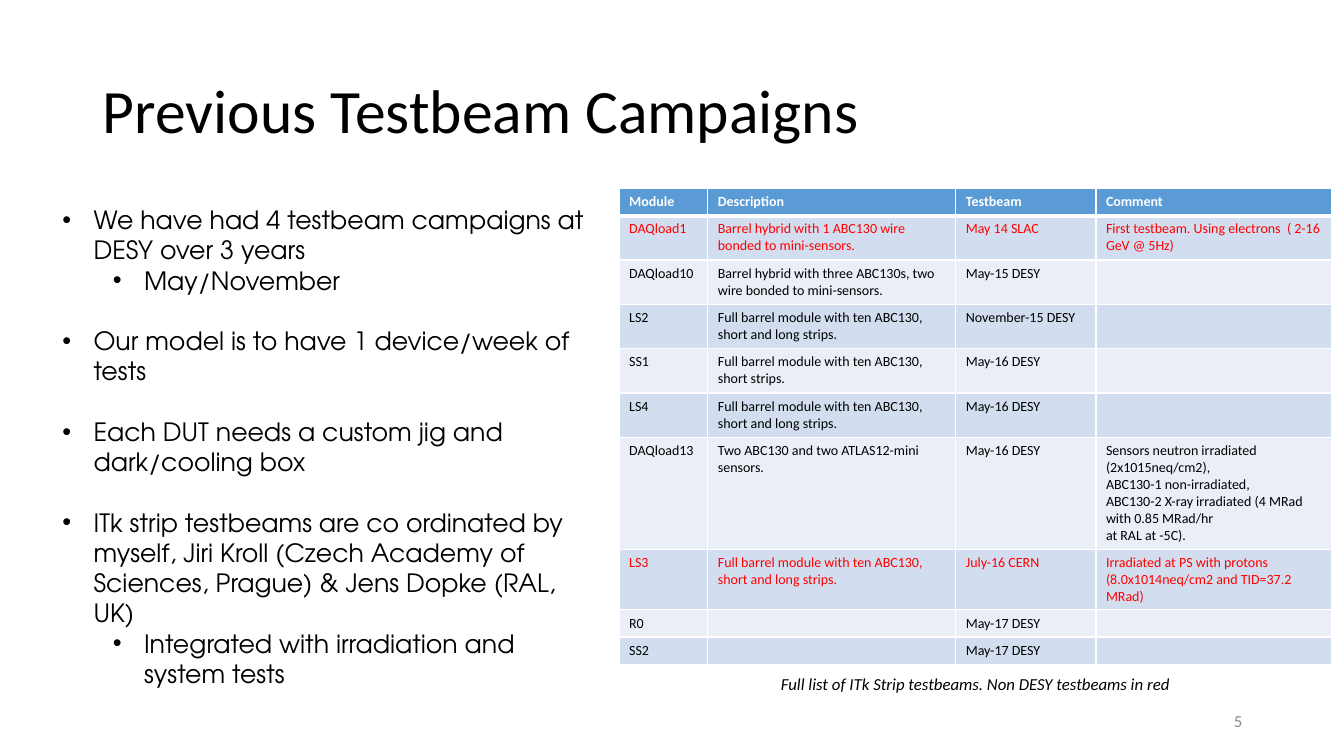
from collections import namedtuple
from dataclasses import dataclass

from lxml.etree import SubElement
from pptx import Presentation
from pptx.dml.color import RGBColor as Color
from pptx.enum.text import MSO_ANCHOR as Anchor, MSO_AUTO_SIZE as AutoSize, PP_ALIGN as Align
from pptx.oxml import parse_xml
from pptx.oxml.ns import nsdecls, qn
from pptx.util import Pt

Box = namedtuple("Box", "left top width height")


@dataclass(frozen=True)
class Theme:
    sans: str = "Calibri"
    geometric: str = "TeX Gyre Adventor"
    black: str = "000000"
    white: str = "FFFFFF"
    grey: str = "8C8C8C"
    red: str = "FF0000"
    header: str = "5B9BD5"
    bands: tuple = ("D2DEEF", "EAEFF7")
    title_size: int = 44
    body_size: int = 18
    small_size: int = 12
    table_size: int = 10
    group_gap: float = 21.6


THEME = Theme()

TITLE = "Previous Testbeam Campaigns"
BULLET_GROUPS = [
    ["We have had 4 testbeam campaigns at DESY over 3 years", "May/November"],
    ["Our model is to have 1 device/week of tests"],
    ["Each DUT needs a custom jig and dark/cooling box"],
    ["ITk strip testbeams are co ordinated by myself, Jiri Kroll "
     "(Czech Academy of Sciences, Prague) & Jens Dopke (RAL, UK)",
     "Integrated with irradiation and system tests"],
]
CAPTION = "Full list of ITk Strip testbeams. Non DESY testbeams in red"

COLUMN_WIDTHS = [88, 246, 139, 234]
HEADINGS = ["Module", "Description", "Testbeam", "Comment"]
FULL_MODULE = "Full barrel module with ten ABC130,\n"
LONG_STRIPS = FULL_MODULE + "short and long strips."
CAMPAIGNS = [
    (2, "DAQload1", "Barrel hybrid with 1 ABC130 wire bonded to mini-sensors.",
     "May 14 SLAC", "First testbeam. Using electrons  ( 2-16 GeV @ 5Hz)"),
    (2, "DAQload10", "Barrel hybrid with three ABC130s, two\nwire bonded to mini-sensors.",
     "May-15 DESY", ""),
    (2, "LS2", LONG_STRIPS, "November-15 DESY", ""),
    (2, "SS1", FULL_MODULE + "short strips.", "May-16 DESY", ""),
    (2, "LS4", LONG_STRIPS, "May-16 DESY", ""),
    (6, "DAQload13", "Two ABC130 and two ATLAS12-mini\nsensors.", "May-16 DESY",
     "Sensors neutron irradiated (2x1015neq/cm2),\nABC130-1 non-irradiated,\n"
     "ABC130-2 X-ray irradiated (4 MRad with 0.85 MRad/hr\nat RAL at -5C)."),
    (3, "LS3", LONG_STRIPS, "July-16 CERN",
     "Irradiated at PS with protons\n(8.0x1014neq/cm2 and TID=37.2 MRad)"),
    (1, "R0", "", "May-17 DESY", ""),
    (1, "SS2", "", "May-17 DESY", ""),
]


def px(length):
    return length * 9144


def place(box):
    return [px(length) for length in box]


def style(para, size, color, name=THEME.sans, bold=False, italic=False):
    for span in para.runs:
        font = span.font
        font.name, font.size = name, Pt(size)
        font.bold, font.italic = bold, italic
        font.color.rgb = Color.from_string(color)


def add_title(page, box):
    title = page.shapes.title
    title.left, title.top, title.width, title.height = place(box)
    frame = title.text_frame
    frame.text = TITLE
    frame.auto_size = AutoSize.NONE
    frame.vertical_anchor = Anchor.MIDDLE
    para = frame.paragraphs[0]
    para.alignment, para.line_spacing = Align.LEFT, 0.9
    style(para, THEME.title_size, THEME.black)


def add_text(page, box, text, align, color, anchor=Anchor.TOP, italic=False):
    frame = page.shapes.add_textbox(*place(box)).text_frame
    frame.word_wrap = True
    frame.vertical_anchor = anchor
    frame.text = text
    para = frame.paragraphs[0]
    para.alignment = align
    style(para, THEME.small_size, color, italic=italic)


def set_bullet(para, level):
    properties = para._p.get_or_add_pPr()
    properties.set("marL", str(px(31 + 50 * level)))
    properties.set("indent", str(px(-31)))
    SubElement(properties, qn("a:buFont")).set("typeface", "Arial")
    SubElement(properties, qn("a:buChar")).set("char", "•")
    para.level = level


def add_bullets(page, box):
    frame = page.shapes.add_textbox(*place(box)).text_frame
    frame.word_wrap = True
    frame.auto_size = AutoSize.SHAPE_TO_FIT_TEXT
    para = frame.paragraphs[0]
    for group_index, group in enumerate(BULLET_GROUPS):
        for level, text in enumerate(group):
            if group_index or level:
                para = frame.add_paragraph()
            para.text = text
            set_bullet(para, level)
            if group_index and level == 0:
                para.space_before = Pt(THEME.group_gap)
            style(para, THEME.body_size, THEME.black, THEME.geometric)


def set_borders(cell, top, bottom):
    properties = cell._tc.get_or_add_tcPr()
    sides = [("lnL", 1), ("lnR", 1), ("lnT", top), ("lnB", bottom)]
    for index, (side, points) in enumerate(sides):
        properties.insert(index, parse_xml(
            f'<a:{side} {nsdecls("a")} w="{Pt(points)}"><a:solidFill>'
            f'<a:srgbClr val="{THEME.white}"/></a:solidFill></a:{side}>'))


def fill_cell(cell, text, fill, color, bold):
    cell.text = text
    cell.fill.solid()
    cell.fill.fore_color.rgb = Color.from_string(fill)
    for para in cell.text_frame.paragraphs:
        style(para, THEME.table_size, color, bold=bold)
        if not text:
            SubElement(para._p, qn("a:endParaRPr")).set("sz", str(THEME.table_size * 100))


def add_campaign_table(page, box):
    rows = [(1, *HEADINGS)] + CAMPAIGNS
    table = page.shapes.add_table(len(rows), len(HEADINGS), *place(box)).table
    for column, width in zip(table.columns, COLUMN_WIDTHS):
        column.width = px(width)
    for index, (lines, *texts) in enumerate(rows):
        table.rows[index].height = px(10 + round(16.8 * lines))
        is_header = index == 0
        if is_header:
            fill, color = THEME.header, THEME.white
        else:
            fill = THEME.bands[(index - 1) % 2]
            color = THEME.black if "DESY" in texts[2] else THEME.red
        for column, text in enumerate(texts):
            cell = table.cell(index, column)
            fill_cell(cell, text, fill, color, is_header)
            set_borders(cell, 3 if index == 1 else 1, 3 if is_header else 1)


def build_campaign_page(deck):
    page = deck.slides.add_slide(deck.slide_layouts[5])
    add_title(page, Box(92, 40, 1150, 145))
    add_text(page, Box(942, 695, 300, 40), "5", Align.RIGHT, THEME.grey, Anchor.MIDDLE)
    table_box = Box(614, 187, sum(COLUMN_WIDTHS), 467)
    add_campaign_table(page, table_box)
    add_bullets(page, Box(52, 198, 552, 495))
    caption_box = table_box._replace(top=663, height=30)
    add_text(page, caption_box, CAPTION, Align.CENTER, THEME.black, italic=True)


def main():
    deck = Presentation()
    deck.slide_width, deck.slide_height = px(1333), px(750)
    build_campaign_page(deck)
    deck.save("out.pptx")


if __name__ == "__main__":
    main()
